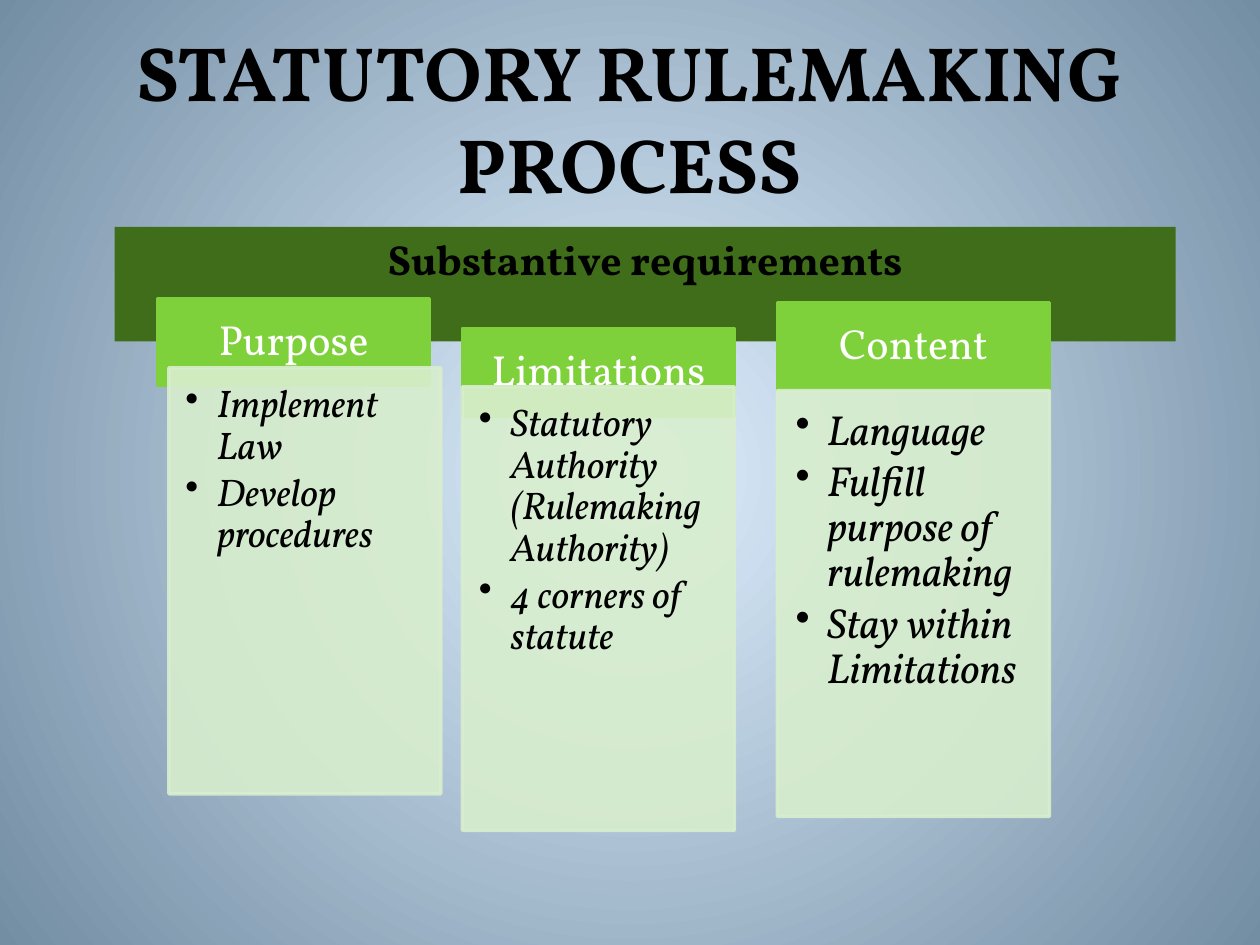
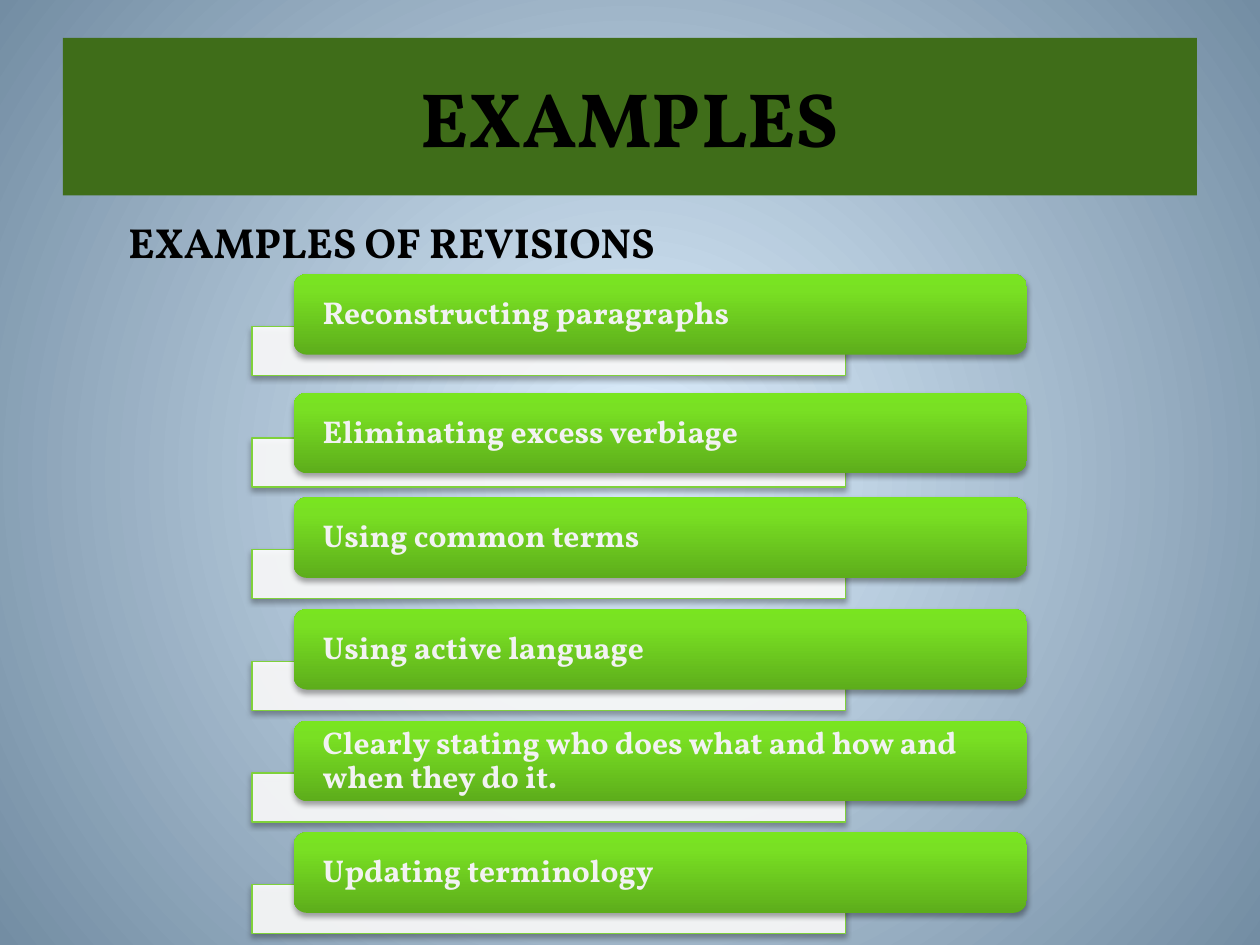
from dataclasses import dataclass

from lxml.etree import SubElement
from pptx import Presentation
from pptx.dml.color import RGBColor
from pptx.enum.shapes import MSO_SHAPE as Preset
from pptx.enum.text import MSO_ANCHOR as Anchor, PP_ALIGN as Align
from pptx.oxml import parse_xml
from pptx.oxml.ns import nsdecls, qn
from pptx.util import Inches, Pt

COLUMNS, ROWS = 100, 75
CELL = Inches(0.1)


@dataclass(frozen=True)
class Theme:
    font: str = "Vollkorn"
    ink: str = "000000"
    white: str = "FFFFFF"
    bar_text: str = "F2F2F2"
    band: str = "3F6D19"
    accent: str = "7FD13B"
    panel: str = "D8EECE"
    backdrop: tuple = ((0, "DFF0FF"), (100, "738DA3"))
    bar: tuple = ((0, "5DAD1B"), (80, "79E023"), (100, "79E520"))
    title_size: int = 44
    heading_size: int = 24
    list_size: int = 22
    bar_size: int = 18


@dataclass(frozen=True)
class Box:
    """A rectangle in grid cells."""
    left: float
    top: float
    width: float
    height: float

    def inner(self, left, top, width, height):
        return Box(self.left + left, self.top + top, width, height)

    def lengths(self):
        return [round(n * CELL) for n in (self.left, self.top, self.width, self.height)]


@dataclass(frozen=True)
class Panel:
    heading: str
    left: float
    top: float
    shift: float
    drop: float
    body_height: float
    size: int
    items: tuple


THEME = Theme()
TITLE_BOX = Box(5, 3, 90, 12.5)
PANEL_WIDTH = 21.6
PANELS = (
    Panel("Purpose", 12.5, 23.7, 0.9, 5.5, 33.8, THEME.list_size,
          ("Implement Law", "Develop procedures")),
    Panel("Limitations", 36.7, 26.1, 0, 4.6, 35.2, THEME.list_size,
          ("Statutory Authority (Rulemaking Authority)", "4 corners of statute")),
    Panel("Content", 61.7, 24, 0, 7, 33.8, THEME.heading_size,
          ("Language", "Fulfill purpose of rulemaking", "Stay within Limitations")),
)
REVISIONS = (
    "Reconstructing paragraphs",
    "Eliminating excess verbiage",
    "Using common terms",
    "Using active language",
    "Clearly stating who does what and how and when they do it.",
    "Updating terminology",
)


def gradient(stops, direction):
    marks = "".join(f'<a:gs pos="{pos * 1000}"><a:srgbClr val="{color}"/></a:gs>'
                    for pos, color in stops)
    return parse_xml(f'<a:gradFill {nsdecls("a")} rotWithShape="1">'
                     f"<a:gsLst>{marks}</a:gsLst>{direction}</a:gradFill>")


def swap_solid_fill(parent, new_fill):
    parent.replace(parent.find(qn("a:solidFill")), new_fill)


def set_opacity(parent, percent):
    color = parent.find(qn("a:solidFill")).find(qn("a:srgbClr"))
    SubElement(color, qn("a:alpha"), val=str(percent * 1000))


def add_page(deck):
    page = deck.slides.add_slide(deck.slide_layouts[6])
    page.background.fill.solid()
    circle = ('<a:path path="circle"><a:fillToRect l="50000" t="50000" '
              'r="50000" b="50000"/></a:path>')
    swap_solid_fill(next(page.element.iter(qn("p:bgPr"))),
                    gradient(THEME.backdrop, circle))
    return page


def add_block(page, box, fill, line=None, line_width=2, opacity=100,
              preset=Preset.RECTANGLE):
    shape = page.shapes.add_shape(preset, *box.lengths())
    shape.shadow.inherit = False
    shape.fill.solid()
    shape.fill.fore_color.rgb = RGBColor.from_string(fill)
    if line:
        shape.line.color.rgb = RGBColor.from_string(line)
        shape.line.width = Pt(line_width)
    else:
        shape.line.fill.background()
    if opacity < 100:
        set_opacity(shape.element.spPr, opacity)
    return shape


def add_soft_shadow(shape):
    effects = shape.element.spPr.find(qn("a:effectLst"))
    shadow = SubElement(effects, qn("a:outerShdw"), blurRad=str(Pt(3.1)),
                        dist=str(Pt(1.8)), dir="5400000", rotWithShape="0")
    color = SubElement(shadow, qn("a:srgbClr"), val=THEME.ink)
    SubElement(color, qn("a:alpha"), val="35000")


def write(shape, lines, size, color=THEME.ink, bold=False, italic=False,
          align=Align.CENTER, anchor=Anchor.MIDDLE, insets=(1, 0.5, 1, 0.5),
          spacing=1.0):
    """Fill a shape with paragraphs; insets are left, top, right, bottom in cells."""
    frame = shape.text_frame
    frame.word_wrap = True
    frame.vertical_anchor = anchor
    (frame.margin_left, frame.margin_top, frame.margin_right,
     frame.margin_bottom) = [round(n * CELL) for n in insets]
    frame.text = "\n".join(lines)
    for para in frame.paragraphs:
        para.alignment = align
        para.line_spacing = spacing
        para.font.name = THEME.font
        para.font.size = Pt(size)
        para.font.bold = bold
        para.font.italic = italic
        para.font.color.rgb = RGBColor.from_string(color)
    return frame


def add_bullets(frame, gap):
    for para in frame.paragraphs:
        para.space_after = Pt(gap)
        props = para._p.get_or_add_pPr()
        props.set("marL", str(Inches(0.25)))
        props.set("indent", str(-Inches(0.25)))
        SubElement(props, qn("a:buChar"), char="•")


def add_title(page, text, fill=None):
    if fill:
        shape = add_block(page, TITLE_BOX, fill)
    else:
        shape = page.shapes.add_textbox(*TITLE_BOX.lengths())
    write(shape, [text], THEME.title_size, bold=True)


def add_panel(page, panel):
    box = Box(panel.left, panel.top, PANEL_WIDTH, panel.drop + panel.body_height)
    header = add_block(page, box.inner(0, 0, box.width, 6.9),
                       THEME.accent, THEME.accent)
    write(header, [panel.heading], THEME.heading_size, THEME.white,
          insets=(1.9, 1.1, 1.9, 1.1), spacing=0.9)

    body = add_block(page, box.inner(panel.shift, panel.drop, box.width, panel.body_height),
                     THEME.panel, THEME.panel, opacity=90)
    set_opacity(body.element.spPr.find(qn("a:ln")), 90)
    inset = panel.size * 0.06
    frame = write(body, panel.items, panel.size, italic=True, align=Align.LEFT,
                  anchor=Anchor.TOP, spacing=0.9,
                  insets=(inset, inset, inset * 1.33, inset * 1.5))
    add_bullets(frame, panel.size * 0.14)


def add_revision(page, box, text, lift):
    """A pale tray with a green bar raised above it by lift."""
    tray = add_block(page, box.inner(0, 0, 47.1, 3.9), THEME.white, THEME.accent,
                     line_width=0.75, opacity=90)
    bar = add_block(page, box.inner(3.3, -lift, 58.2, 6.4), THEME.accent,
                    preset=Preset.ROUNDED_RECTANGLE)
    swap_solid_fill(bar.element.spPr,
                    gradient(THEME.bar, '<a:lin ang="16200000" scaled="0"/>'))
    for shape in (tray, bar):
        add_soft_shadow(shape)
    write(bar, [text], THEME.bar_size, THEME.bar_text, bold=True,
          align=Align.LEFT, insets=(2, 0, 2, 0), spacing=0.9)


def build_process(deck):
    page = add_page(deck)
    add_title(page, "STATUTORY RULEMAKING PROCESS")
    band = add_block(page, Box(9.1, 18, 84.2, 9.1), THEME.band)
    write(band, ["Substantive requirements"], THEME.heading_size, bold=True,
          anchor=Anchor.TOP)
    for panel in PANELS:
        add_panel(page, panel)


def build_examples(deck):
    page = add_page(deck)
    add_title(page, "EXAMPLES", THEME.band)
    heading = page.shapes.add_textbox(*Box(9.2, 16.7, 84.2, 5).lengths())
    write(heading, ["EXAMPLES OF REVISIONS"], THEME.heading_size, bold=True,
          align=Align.LEFT, anchor=Anchor.TOP)
    first, last = 25.9, 70.2
    pitch = (last - first) / (len(REVISIONS) - 1)
    for index, text in enumerate(REVISIONS):
        lift = 3.6 if index == 1 else 4.15
        add_revision(page, Box(20, first + index * pitch, 61.5, 3.9), text, lift)


def main():
    deck = Presentation()
    deck.slide_width, deck.slide_height = COLUMNS * CELL, ROWS * CELL
    build_process(deck)
    build_examples(deck)
    deck.save("out.pptx")


if __name__ == "__main__":
    main()
